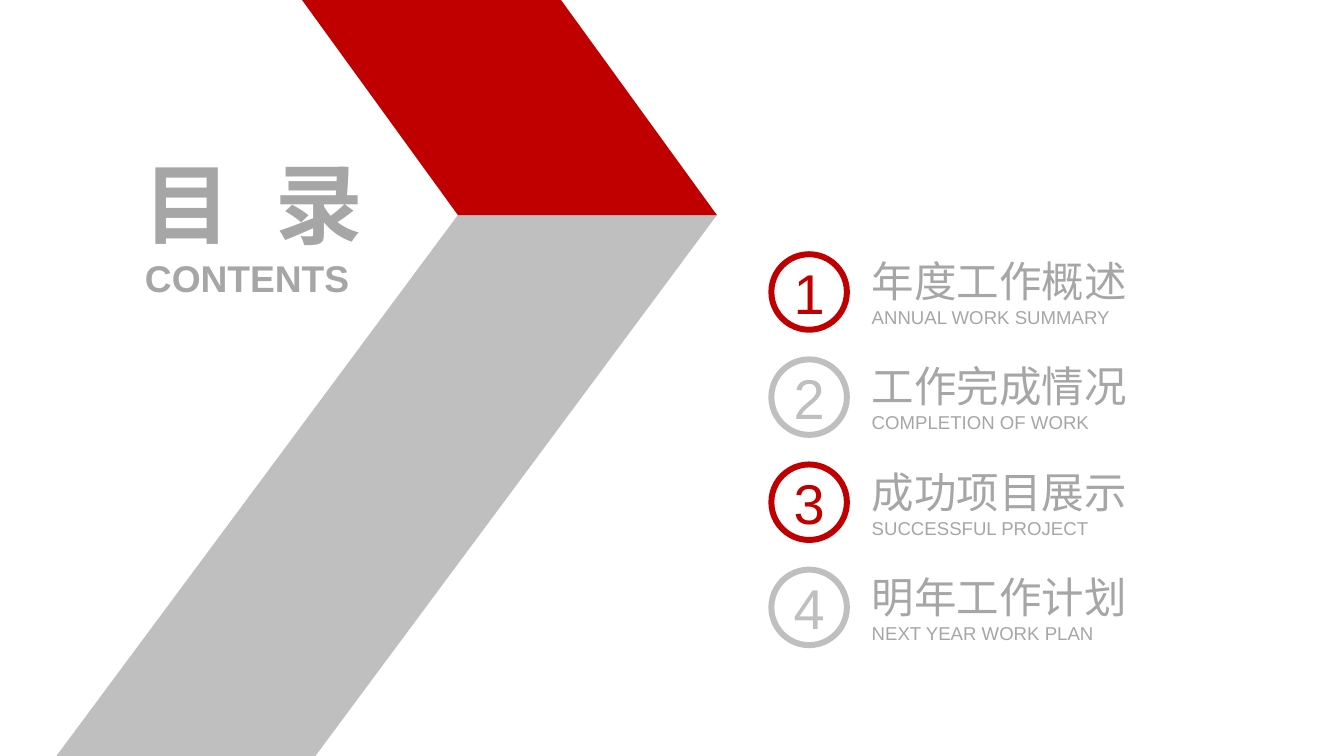
from dataclasses import dataclass

from pptx import Presentation
from pptx.dml.color import RGBColor
from pptx.enum import shapes, text
from pptx.util import Pt

TITLE, SUBTITLE = "目 录", "CONTENTS"
CHAPTERS = [
    ("年度工作概述", "ANNUAL WORK SUMMARY"),
    ("工作完成情况", "COMPLETION OF WORK"),
    ("成功项目展示", "SUCCESSFUL PROJECT"),
    ("明年工作计划", "NEXT YEAR WORK PLAN"),
]


@dataclass(frozen=True)
class Theme:
    font: str = "Arial"
    red: RGBColor = RGBColor(0xC0, 0x00, 0x00)
    silver: RGBColor = RGBColor(0xBF, 0xBF, 0xBF)
    grey: RGBColor = RGBColor(0xA6, 0xA6, 0xA6)
    white: RGBColor = RGBColor(0xFF, 0xFF, 0xFF)
    title: float = 66
    subtitle: float = 28
    number: float = 42.2
    chapter: float = 32
    caption: float = 14


THEME = Theme()
SLIDE_W, SLIDE_H = 1012.3, 569.5

# Folded band: left edge at the top, at the fold and at the bottom
BAND_W = 195.1
BAND_TOP, BAND_FOLD, BAND_BOTTOM = (227.5, 0), (344.9, 162), (42.5, SLIDE_H)

# Chapter list
CIRCLE_X, LIST_Y, CIRCLE = 581, 191.5, 56.9
CHAPTER_X, CHAPTER_W, CHAPTER_H = 656.6, 213.1, 55.4
PITCH = 79.2
TITLE_TRACKING = 9


def write(shape, lines, align, anchor=text.MSO_ANCHOR.MIDDLE):
    """Fill a shape with lines of (words, size, colour, bold)."""
    frame = shape.text_frame
    frame.word_wrap = True
    frame.vertical_anchor = anchor
    frame.margin_left = frame.margin_right = frame.margin_top = frame.margin_bottom = 0
    frame.text = "\n".join(line[0] for line in lines)
    for paragraph, (_, size, color, bold) in zip(frame.paragraphs, lines):
        paragraph.alignment = align
        font = paragraph.font
        font.name, font.size, font.bold = THEME.font, Pt(size), bold
        font.color.rgb = color
    return frame


def add_text(slide, box, *args):
    return write(slide.shapes.add_textbox(*map(Pt, box)), *args)


def add_band(slide, start, end, color):
    (x1, y1), (x2, y2) = start, end
    corners = [(x1 + BAND_W, y1), (x2 + BAND_W, y2), (x2, y2)]
    builder = slide.shapes.build_freeform(Pt(x1), Pt(y1))
    builder.add_line_segments([(Pt(x), Pt(y)) for x, y in corners], close=True)
    band = builder.convert_to_shape()
    band.shadow.inherit = False
    band.fill.solid()
    band.fill.fore_color.rgb = color
    band.line.fill.background()


def add_number(slide, number, y, color):
    circle = slide.shapes.add_shape(
        shapes.MSO_SHAPE.OVAL, *map(Pt, (CIRCLE_X, y, CIRCLE, CIRCLE)))
    circle.shadow.inherit = False
    circle.fill.solid()
    circle.fill.fore_color.rgb = THEME.white
    circle.line.color.rgb = color
    circle.line.width = Pt(4.5)
    write(circle, [(str(number), THEME.number, color, False)], text.PP_ALIGN.CENTER)


def main():
    deck = Presentation()
    deck.slide_width, deck.slide_height = Pt(SLIDE_W), Pt(SLIDE_H)
    slide = deck.slides.add_slide(deck.slide_layouts[6])

    title = add_text(slide, (90.7, 112.3, 191.5, 79.9),
                     [(TITLE, THEME.title, THEME.grey, True)], text.PP_ALIGN.CENTER)
    # Letter spacing also trails the last letter; the margin balances it
    title.paragraphs[0].runs[0].font._element.set("spc", str(TITLE_TRACKING * 100))
    title.margin_left = Pt(TITLE_TRACKING)
    add_text(slide, (91.4, 192.2, 189.4, 33.8),
             [(SUBTITLE, THEME.subtitle, THEME.grey, True)],
             text.PP_ALIGN.CENTER, text.MSO_ANCHOR.TOP)

    add_band(slide, BAND_FOLD, BAND_BOTTOM, THEME.silver)
    add_band(slide, BAND_TOP, BAND_FOLD, THEME.red)

    for index, (chapter, caption) in enumerate(CHAPTERS):
        y = LIST_Y + index * PITCH
        add_number(slide, index + 1, y, THEME.silver if index % 2 else THEME.red)
        chapter_y = y + (CIRCLE - CHAPTER_H) / 2
        add_text(slide, (CHAPTER_X, chapter_y, CHAPTER_W, CHAPTER_H),
                 [(chapter, THEME.chapter, THEME.grey, False),
                  (caption, THEME.caption, THEME.grey, False)], text.PP_ALIGN.LEFT)

    deck.save("out.pptx")


if __name__ == "__main__":
    main()
